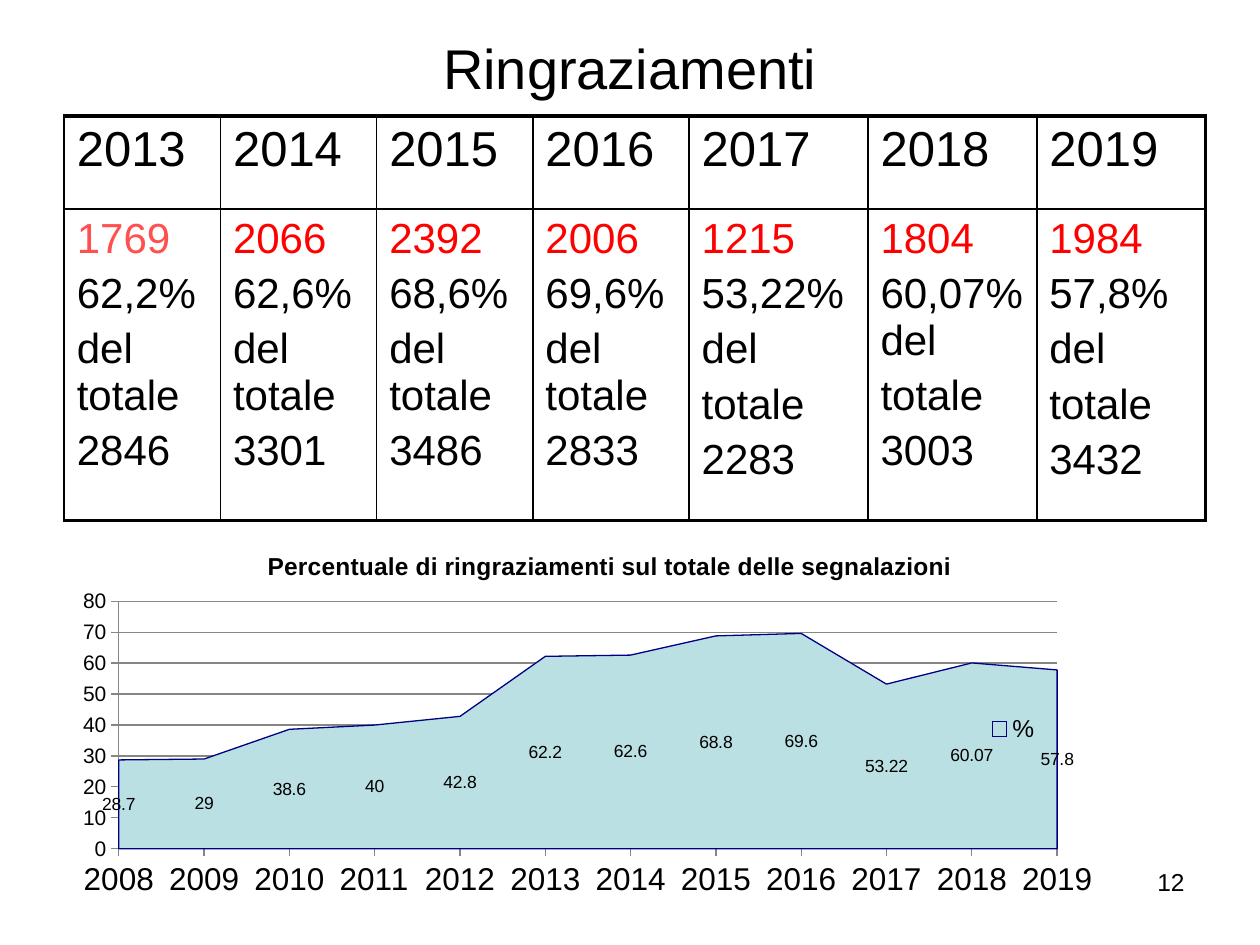
"""Build the slide on thanks received, with a yearly table and an area chart."""
from dataclasses import dataclass

from lxml import etree
from pptx import Presentation
from pptx.chart.data import CategoryChartData
from pptx.dml.color import RGBColor
from pptx.enum.chart import XL_CHART_TYPE, XL_LEGEND_POSITION, XL_TICK_MARK
from pptx.enum.text import MSO_ANCHOR, PP_ALIGN
from pptx.oxml.ns import qn
from pptx.util import Inches, Pt

AREA_STACKED = XL_CHART_TYPE.AREA_STACKED
LEGEND_RIGHT = XL_LEGEND_POSITION.RIGHT
TICK_CROSS = XL_TICK_MARK.CROSS
MIDDLE = MSO_ANCHOR.MIDDLE
CENTER, LEFT, RIGHT = PP_ALIGN.CENTER, PP_ALIGN.LEFT, PP_ALIGN.RIGHT

COLORS = {
    "text": "000000",
    "count": "FF0000",
    "first_count": "FF5050",
    "area": "BBE0E3",
    "outline": "000082",
    "grid": "868686",
}
FONT = "Arial"
THIN, THICK = 1, 2.25
COLUMN_WIDTHS = [1.24] * 4 + [1.42] + [1.34] * 2
ROW_HEIGHTS = [0.74, 2.47]
PERCENTAGES = [28.7, 29, 38.6, 40, 42.8, 62.2, 62.6, 68.8, 69.6, 53.22, 60.07, 57.8]


@dataclass
class Year:
    """Hold one column of the table."""

    label: str
    count: str
    lines: list[str]
    count_color: str = "count"


YEARS = [
    Year("2013", "1769", ["62,2%", "del totale", "2846"], "first_count"),
    Year("2014", "2066", ["62,6%", "del totale", "3301"]),
    Year("2015", "2392", ["68,6%", "del totale", "3486"]),
    Year("2016", "2006", ["69,6%", "del totale", "2833"]),
    Year("2017", "1215", ["53,22%", "del", "totale", "2283"]),
    Year("2018", "1804", ["60,07%\vdel", "totale", "3003"]),
    Year("2019", "1984", ["57,8%", "del", "totale", "3432"]),
]


def format_font(font, size: float, color: str = "text", bold: bool = False) -> None:
    """Apply the slide font with a size and a colour."""
    for name, value in {"name": FONT, "size": Pt(size), "bold": bold}.items():
        setattr(font, name, value)
    font.color.rgb = RGBColor.from_string(COLORS[color])


def write_lines(frame, lines: list[str], size: float, colors: list[str],
                alignment=LEFT, gap: float = 0) -> None:
    """Write one paragraph for each line, in the matching colour."""
    frame.word_wrap = True
    for index, (line, color) in enumerate(zip(lines, colors)):
        paragraph = frame.add_paragraph() if index else frame.paragraphs[0]
        paragraph.text = line
        paragraph.alignment = alignment
        paragraph.space_before = Pt(size * gap)
        for run in paragraph.runs:
            format_font(run.font, size, color)


def set_borders(cell, widths: dict[str, float]) -> None:
    """Draw solid borders on a cell, given widths by side."""
    properties = cell._tc.get_or_add_tcPr()
    for index, (side, width) in enumerate(widths.items()):
        line = etree.Element(qn(f"a:ln{side}"), w=str(Pt(width)))
        fill = etree.SubElement(line, qn("a:solidFill"))
        etree.SubElement(fill, qn("a:srgbClr"), val=COLORS["text"])
        properties.insert(index, line)


def set_layout(parent, position: int, values: dict[str, float], inner: bool = False) -> None:
    """Place a chart part by fractions of the chart area."""
    for previous in parent.findall(qn("c:layout")):
        parent.remove(previous)
    layout = etree.Element(qn("c:layout"))
    manual = etree.SubElement(layout, qn("c:manualLayout"))
    settings = {"layoutTarget": "inner"} if inner else {}
    settings |= {"xMode": "edge", "yMode": "edge"} | values
    for name, value in settings.items():
        etree.SubElement(manual, qn(f"c:{name}"), val=str(value))
    parent.insert(position, layout)


def add_title(slide) -> None:
    """Move and format the title placeholder."""
    title = slide.shapes.title
    bounds = {"left": 0.5, "top": 0.3, "width": 9, "height": 0.46}
    for name, value in bounds.items():
        setattr(title, name, Inches(value))
    title.text_frame.vertical_anchor = MIDDLE
    write_lines(title.text_frame, ["Ringraziamenti"], 32, ["text"], CENTER)


def add_year_table(slide) -> None:
    """Add the table with one column a year."""
    shape = slide.shapes.add_table(
        len(ROW_HEIGHTS), len(YEARS), Inches(0.51), Inches(0.92),
        Inches(sum(COLUMN_WIDTHS)), Inches(sum(ROW_HEIGHTS)))
    table = shape.table
    for name in ("first_row", "horz_banding"):
        setattr(table, name, False)
    for row, height in zip(table.rows, ROW_HEIGHTS):
        row.height = Inches(height)
    for index, (year, width) in enumerate(zip(YEARS, COLUMN_WIDTHS)):
        table.columns[index].width = Inches(width)
        right = THICK if index == len(YEARS) - 1 else THIN
        header, body = table.cell(0, index), table.cell(1, index)
        write_lines(header.text_frame, [year.label], 28, ["text"], gap=0.2)
        write_lines(body.text_frame, [year.count, *year.lines], 24,
                    [year.count_color] + ["text"] * len(year.lines), gap=0.2)
        for cell, top, bottom in ((header, THICK, THIN), (body, THIN, THICK)):
            cell.fill.background()
            set_borders(cell, {"L": THIN, "R": right, "T": top, "B": bottom})


def add_percentage_chart(slide) -> None:
    """Add the area chart of yearly percentages."""
    data = CategoryChartData()
    data.categories = [str(2008 + index) for index in range(len(PERCENTAGES))]
    data.add_series("%", PERCENTAGES)
    chart = slide.shapes.add_chart(
        AREA_STACKED, Inches(0.51), Inches(4.22), Inches(8.66), Inches(3.07), data).chart
    format_font(chart.font, 18)

    chart.has_title = True
    title = chart.chart_title.text_frame
    title.text = "Percentuale di ringraziamenti sul totale delle segnalazioni"
    format_font(title.paragraphs[0].runs[0].font, 14, bold=True)

    for axis, size in ((chart.category_axis, 18), (chart.value_axis, 12)):
        axis.major_tick_mark = TICK_CROSS
        axis.format.line.color.rgb = RGBColor.from_string(COLORS["grid"])
        format_font(axis.tick_labels.font, size)
    chart.category_axis.has_major_gridlines = False
    value_axis = chart.value_axis
    scale = {"minimum_scale": 0, "maximum_scale": 80, "major_unit": 10,
             "has_major_gridlines": True}
    for name, value in scale.items():
        setattr(value_axis, name, value)
    value_axis.major_gridlines.format.line.color.rgb = RGBColor.from_string(COLORS["grid"])
    value_axis._element.find(qn("c:crossBetween")).set("val", "midCat")

    plot = chart.plots[0]
    plot.vary_by_categories = False
    series = plot.series[0]
    series.format.fill.solid()
    series.format.fill.fore_color.rgb = RGBColor.from_string(COLORS["area"])
    series.format.line.color.rgb = RGBColor.from_string(COLORS["outline"])
    series.format.line.width = Pt(0.75)
    labels = series.data_labels
    labels.show_value = True
    format_font(labels.font, 10)

    chart.has_legend = True
    legend = chart.legend
    legend.position = LEGEND_RIGHT
    legend.include_in_layout = False
    format_font(legend.font, 14)
    set_layout(legend._element, 1, {"x": 0.84, "y": 0.46, "w": 0.06, "h": 0.1})
    plot_area = chart._chartSpace.chart.plotArea
    set_layout(plot_area, 0, {"x": 0.05, "y": 0.18, "w": 0.86, "h": 0.64}, inner=True)


def add_page_number(slide) -> None:
    """Add the page number at the lower right."""
    box = slide.shapes.add_textbox(Inches(7.17), Inches(6.83), Inches(2.33), Inches(0.52))
    write_lines(box.text_frame, ["12"], 14, ["text"], RIGHT)


def main() -> None:
    """Build and save the presentation."""
    presentation = Presentation()
    presentation.slide_width, presentation.slide_height = Inches(10), Inches(7.5)
    slide = presentation.slides.add_slide(presentation.slide_layouts[5])
    add_title(slide)
    add_year_table(slide)
    add_percentage_chart(slide)
    add_page_number(slide)
    presentation.save("out.pptx")


if __name__ == "__main__":
    main()
